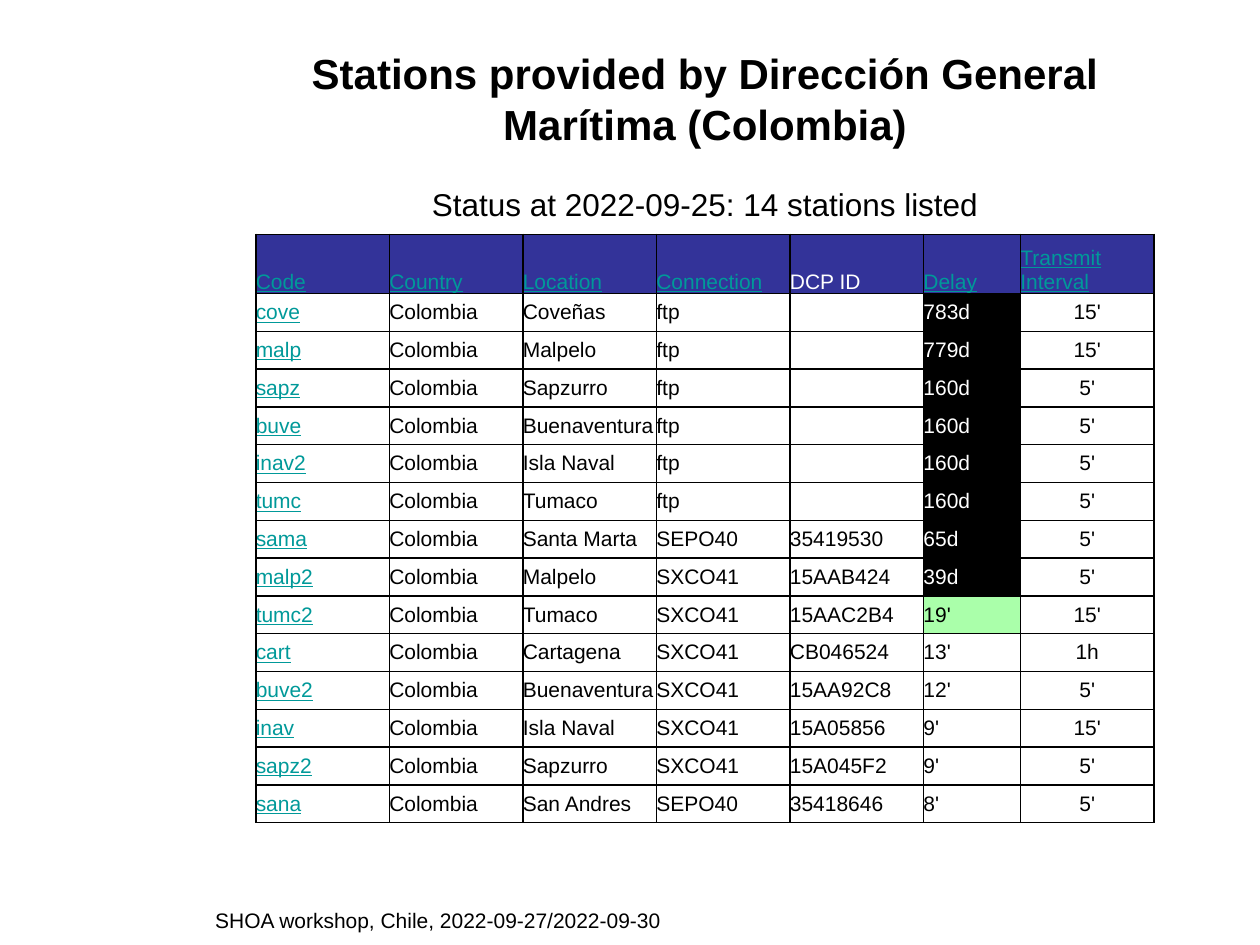
from pptx import Presentation
from pptx.dml.color import RGBColor as RGB
from pptx.enum.text import MSO_ANCHOR as Anchor, PP_ALIGN as Align
from pptx.oxml import parse_xml
from pptx.oxml.ns import nsdecls
from pptx.util import Inches, Pt

TITLE = "Stations provided by Dirección General Marítima (Colombia)"
STATUS = "Status at 2022-09-25: 14 stations listed"
FOOTER = "SHOA workshop, Chile, 2022-09-27/2022-09-30"
LAND = "Colombia"
HEADS = ["Code", "Country", "Location", "Connection", "DCP ID", "Delay", "Transmit\vInterval"]
ROWS = [
    ("cove", "Coveñas", "ftp", "", "783d", "15'"),
    ("malp", "Malpelo", "ftp", "", "779d", "15'"),
    ("sapz", "Sapzurro", "ftp", "", "160d", "5'"),
    ("buve", "Buenaventura", "ftp", "", "160d", "5'"),
    ("inav2", "Isla Naval", "ftp", "", "160d", "5'"),
    ("tumc", "Tumaco", "ftp", "", "160d", "5'"),
    ("sama", "Santa Marta", "SEPO40", "35419530", "65d", "5'"),
    ("malp2", "Malpelo", "SXCO41", "15AAB424", "39d", "5'"),
    ("tumc2", "Tumaco", "SXCO41", "15AAC2B4", "19'", "15'"),
    ("cart", "Cartagena", "SXCO41", "CB046524", "13'", "1h"),
    ("buve2", "Buenaventura", "SXCO41", "15AA92C8", "12'", "5'"),
    ("inav", "Isla Naval", "SXCO41", "15A05856", "9'", "15'"),
    ("sapz2", "Sapzurro", "SXCO41", "15A045F2", "9'", "5'"),
    ("sana", "San Andres", "SEPO40", "35418646", "8'", "5'"),
]
WIDTHS = [1.06] * 5 + [0.77, 1.06]
HEIGHTS = [0.47] + [0.3] * len(ROWS)
THEME = {
    "font": "Arial", "title": 24, "status": 18, "body": 12,
    "ink": "000000", "paper": "FFFFFF", "link": "009999",
    "head": "333399", "late": "000000", "fresh": "AAFFAA",
}


def style(para, size, tint="ink", bold=False, line=False):
    """Set the font of a paragraph from the theme."""
    font = para.font
    font.name, font.size = THEME["font"], Pt(THEME[size])
    font.bold, font.underline = bold, line
    font.color.rgb = RGB.from_string(THEME[tint])


def add_box(slide, left, top, width, height, wrap):
    """Add a text box and return its frame."""
    box = slide.shapes.add_textbox(*map(Inches, (left, top, width, height)))
    box.text_frame.word_wrap = wrap
    return box.text_frame


def add_edges(cell):
    """Draw a thin line on all four sides of a cell."""
    props = cell._tc.get_or_add_tcPr()
    for side in "LRTB":
        props.append(parse_xml(
            f'<a:ln{side} {nsdecls("a")} w="{Pt(1)}"><a:solidFill>'
            f'<a:srgbClr val="{THEME["ink"]}"/></a:solidFill></a:ln{side}>'))


def look(row, col, text):
    """Return the fill and text colour of a cell."""
    if row == 0:
        return "head", "paper" if text == "DCP ID" else "link"
    if HEADS[col] == "Delay":
        if text.endswith("d"):
            return "late", "paper"
        return "fresh" if text == "19'" else "paper", "ink"
    return None, "link" if col == 0 else "ink"


def fill_cell(cell, row, col, text):
    """Write and format one cell."""
    fill, tint = look(row, col, text)
    cell.margin_left = cell.margin_right = cell.margin_top = cell.margin_bottom = 0
    cell.vertical_anchor = Anchor.MIDDLE if row else Anchor.BOTTOM
    add_edges(cell)
    if fill:
        cell.fill.solid()
        cell.fill.fore_color.rgb = RGB.from_string(THEME[fill])
    else:
        cell.fill.background()
    cell.text = text
    para = cell.text_frame.paragraphs[0]
    if row and col == len(HEADS) - 1:
        para.alignment = Align.CENTER
    style(para, "body", tint, line=tint == "link")


def add_grid(slide):
    """Build the table of stations."""
    data = [HEADS] + [(code, LAND, *rest) for code, *rest in ROWS]
    size = map(Inches, (2.03, 1.86, sum(WIDTHS), sum(HEIGHTS)))
    grid = slide.shapes.add_table(len(data), len(HEADS), *size).table
    grid.first_row = grid.horz_banding = False
    for col, width in zip(grid.columns, WIDTHS):
        col.width = Inches(width)
    for row, height in zip(grid.rows, HEIGHTS):
        row.height = Inches(height)
    for r, line in enumerate(data):
        for c, text in enumerate(line):
            fill_cell(grid.cell(r, c), r, c, text)


def main():
    """Build and save the slide."""
    deck = Presentation()
    deck.slide_width, deck.slide_height = Inches(10), Inches(7.5)
    slide = deck.slides.add_slide(deck.slide_layouts[6])

    foot = add_box(slide, 1.61, 7.15, 3.76, 0.3, False)
    foot.text = FOOTER
    style(foot.paragraphs[0], "body")

    head = add_box(slide, 1.69, 0.3, 7.81, 1.43, True)
    head.margin_top = Inches(0.08)
    head.text = f"{TITLE}\n{STATUS}"
    title, status = head.paragraphs
    title.alignment = status.alignment = Align.CENTER
    status.space_before = Pt(21)
    style(title, "title", bold=True)
    style(status, "status")

    add_grid(slide)
    deck.save("out.pptx")


if __name__ == "__main__":
    main()
